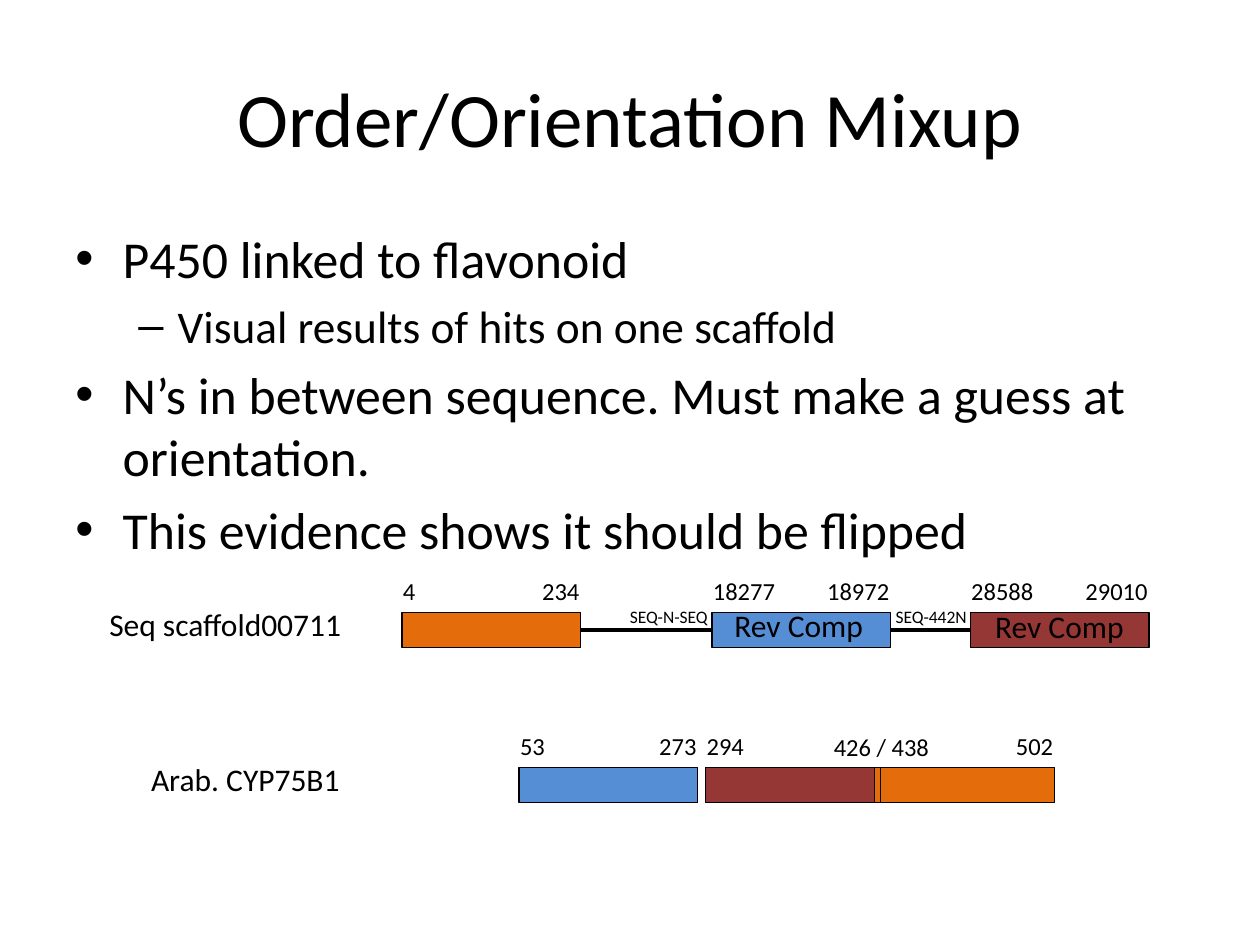
from lxml.etree import SubElement
from pptx import Presentation
from pptx.dml.color import RGBColor
from pptx.enum.shapes import MSO_CONNECTOR, MSO_SHAPE
from pptx.enum.text import MSO_ANCHOR, PP_ALIGN
from pptx.oxml.ns import qn
from pptx.util import Pt

BLACK, BLUE, RED, ORANGE = "000000", "558ED5", "953735", "E46C0A"
BAR_HEIGHT = 20
BAR_WIDTH = 102.2
LABEL_GAP = 24.5
LABEL_OVERHANG = 6.5


def color(value):
    return RGBColor.from_string(value)


def add_span(para, text, size):
    span = para.add_run()
    span.text = text
    span.font.name = "Calibri"
    span.font.size = Pt(size)
    span.font.color.rgb = color(BLACK)


def add_text(page, text, left, top, width, height, size=14,
             align=PP_ALIGN.LEFT, anchor=MSO_ANCHOR.TOP, wrap=False):
    box = page.shapes.add_textbox(Pt(left), Pt(top), Pt(width), Pt(height))
    frame = box.text_frame
    frame.word_wrap = wrap
    frame.vertical_anchor = anchor
    para = frame.paragraphs[0]
    para.alignment = align
    if text:
        add_span(para, text, size)
    return box


def add_bullets(page, items, left, top, width, height):
    """Items are (level, text) pairs."""
    styles = [("•", 29.6, 27, 27), ("–", 25.9, 58.5, 22.5)]
    frame = add_text(page, "", left, top, width, height, wrap=True).text_frame
    for index, (level, text) in enumerate(items):
        mark, size, margin, hanging = styles[level]
        para = frame.add_paragraph() if index else frame.paragraphs[0]
        para.level = level
        para.space_before = Pt(round(size * 0.2, 1))
        properties = para._p.get_or_add_pPr()
        properties.set("marL", str(Pt(margin)))
        properties.set("indent", str(-Pt(hanging)))
        SubElement(properties, qn("a:buFont"), typeface="Arial")
        SubElement(properties, qn("a:buChar"), char=mark)
        add_span(para, text, size)


def add_bar(page, fill, left, top, width=BAR_WIDTH, start="", end=""):
    """Draw a sequence block with its start and end positions above it."""
    bar = page.shapes.add_shape(MSO_SHAPE.RECTANGLE, Pt(left), Pt(top),
                                Pt(width), Pt(BAR_HEIGHT))
    bar.shadow.inherit = False
    bar.fill.solid()
    bar.fill.fore_color.rgb = color(fill)
    bar.line.color.rgb = color(BLACK)
    bar.line.width = Pt(0.75)
    for number, at_end in ((start, False), (end, True)):
        if number:
            label_width = 14.4 + 7.1 * len(number)
            label_left = left - LABEL_OVERHANG
            if at_end:
                label_left = left + width + LABEL_OVERHANG - label_width
            add_text(page, number, label_left, top - LABEL_GAP,
                     label_width, LABEL_GAP)
    return bar


def join_bars(page, first, second):
    line = page.shapes.add_connector(MSO_CONNECTOR.STRAIGHT, 0, 0, 0, 0)
    line.begin_connect(first, 3)
    line.end_connect(second, 1)
    line.line.color.rgb = color(BLACK)
    line.line.width = Pt(2)
    SubElement(line._element.spPr, qn("a:effectLst"))


def add_scaffold(page, left, top):
    add_text(page, "Seq scaffold00711", left, top - 8, 160.5, 29, size=18, wrap=True)
    blocks = [(ORANGE, 174.3, "4", "234"),
              (BLUE, 351.4, "18277", "18972"),
              (RED, 499, "28588", "29010")]
    bars = [add_bar(page, fill, left + offset, top, start=start, end=end)
            for fill, offset, start, end in blocks]
    for first, second in zip(bars, bars[1:]):
        join_bars(page, first, second)
    for offset, drop in ((357.2, -7.2), (506.2, -6.5)):
        add_text(page, "Rev Comp", left + offset, top + drop, 89.3, 29, size=18)
    for text, offset, width in (("SEQ-N-SEQ", 297.4, 82), ("SEQ-442N", 449.3, 57.6)):
        add_text(page, text, left + offset, top - 7.2, width, 19.4, size=10, wrap=True)


def add_protein(page, left, top):
    add_text(page, "Arab. CYP75B1", left, top - 8, 123.8, 29, size=18)
    add_bar(page, BLUE, left + 217.4, top, start="53", end="273")
    add_bar(page, RED, left + 324, top, width=97.2, start="294")
    add_bar(page, ORANGE, left + 421.2, top, end="502")
    add_bar(page, ORANGE, left + 420.5, top, width=3.6)
    add_text(page, "426 / 438", left + 390.2, top - 24, 69.1, LABEL_GAP)


def main():
    deck = Presentation()
    deck.slide_width, deck.slide_height = Pt(720), Pt(540)
    page = deck.slides.add_slide(deck.slide_layouts[6])
    add_text(page, "Order/Orientation Mixup", 36, 21.6, 648, 90, size=44,
             align=PP_ALIGN.CENTER, anchor=MSO_ANCHOR.MIDDLE, wrap=True)
    add_bullets(page, [
        (0, "P450 linked to flavonoid"),
        (1, "Visual results of hits on one scaffold"),
        (0, "N’s in between sequence. Must make a guess at orientation."),
        (0, "This evidence shows it should be flipped"),
    ], 36, 126, 648, 185.8)
    add_scaffold(page, 55.4, 350)
    add_protein(page, 79.2, 438.5)
    deck.save("out.pptx")


if __name__ == "__main__":
    main()
